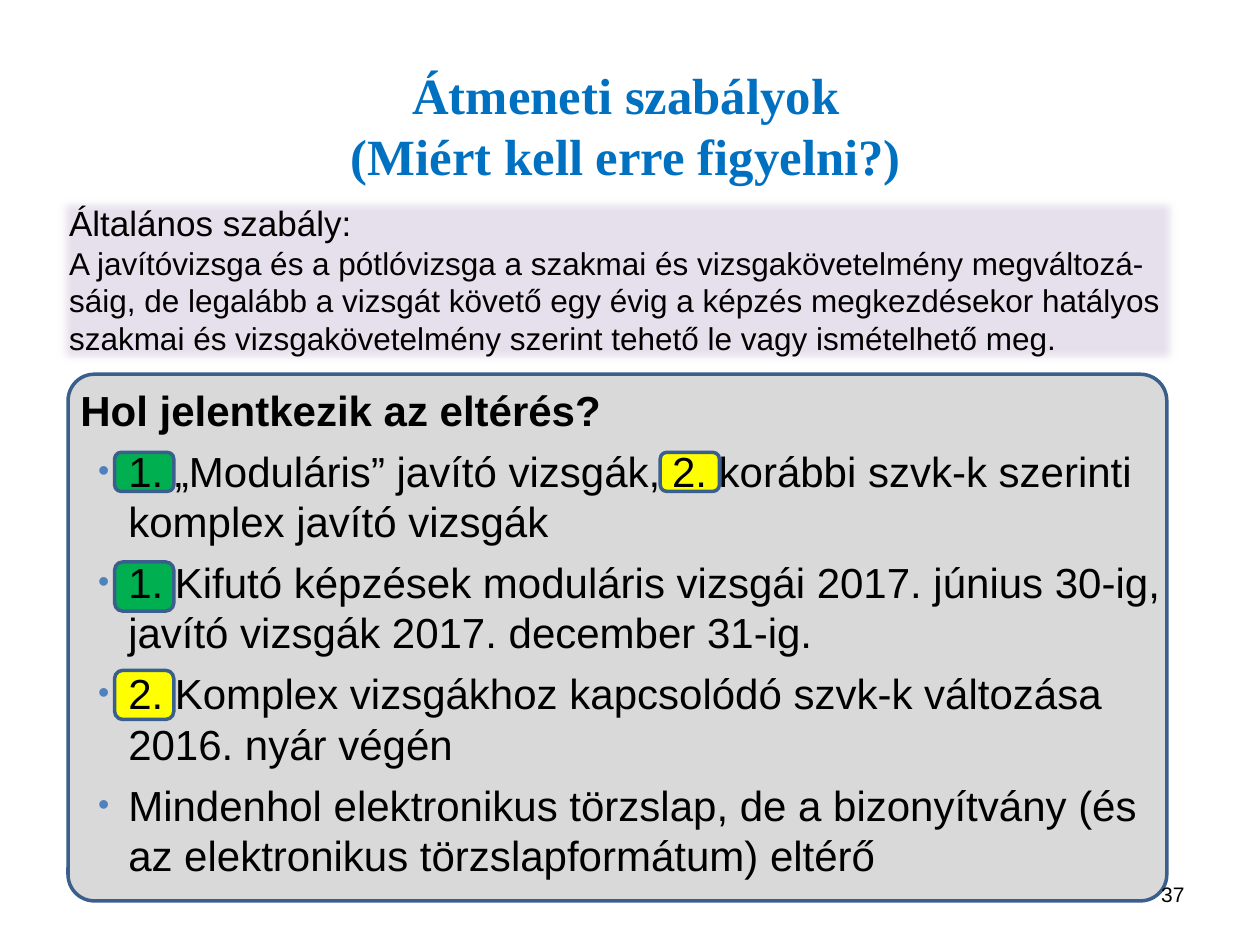
import pptx
import pptx.dml.color
import pptx.enum.shapes
import pptx.enum.text
import pptx.oxml
import pptx.oxml.ns
import pptx.util
from pptx.util import Inches

COLORS = {
    "title": "0070C0", "text": "000000", "rule": "E6E0EC", "panel": "D9D9D9",
    "border": "3A5F8C", "green": "00B050", "yellow": "FFFF00", "bullet": "4F81BD",
}
RGB = {name: pptx.dml.color.RGBColor.from_string(value) for name, value in COLORS.items()}
ALIGN = pptx.enum.text.PP_ALIGN
ANCHOR = pptx.enum.text.MSO_ANCHOR
SHAPE = pptx.enum.shapes.MSO_SHAPE
NS = pptx.oxml.ns.nsdecls("a")

prs = pptx.Presentation()
prs.slide_width, prs.slide_height = Inches(10), Inches(7.5)
slide = prs.slides.add_slide(prs.slide_layouts[6])


def add_box(kind, left, top, width, height, fill, bordered=True):
    box = slide.shapes.add_shape(kind, Inches(left), Inches(top), Inches(width), Inches(height))
    box.shadow.inherit = False
    box.fill.solid()
    box.fill.fore_color.rgb = RGB[fill]
    if bordered:
        box.line.color.rgb = RGB["border"]
        box.line.width = pptx.util.Pt(2)
    else:
        box.line.fill.background()
    return box


def write(frame, lines, align=ALIGN.LEFT, anchor=ANCHOR.TOP, face="Arial", color="text"):
    """Fill a frame with (text, size, bold, space before) lines."""
    frame.word_wrap = True
    frame.vertical_anchor = anchor
    for i, (text, size, bold, before) in enumerate(lines):
        par = frame.add_paragraph() if i else frame.paragraphs[0]
        par.text = text
        par.alignment = align
        par.space_before = pptx.util.Pt(before)
        par.font.name = face
        par.font.size = pptx.util.Pt(size)
        par.font.bold = bold
        par.font.color.rgb = RGB[color]


# Grey panel and number markers
panel = add_box(SHAPE.ROUNDED_RECTANGLE, 0.54, 2.97, 8.72, 4.18, "panel")
panel.adjustments[0] = 0.05
for left, top, height, fill in [
    (5.24, 3.59, 0.31, "yellow"), (0.91, 5.32, 0.39, "yellow"),
    (0.91, 4.46, 0.39, "green"), (0.91, 3.59, 0.31, "green"),
]:
    add_box(SHAPE.ROUNDED_RECTANGLE, left, top, 0.47, height, fill)

# Title
title = slide.shapes.add_textbox(Inches(0.44), Inches(0.44), Inches(9.06), Inches(1.1))
write(title.text_frame, [("Átmeneti szabályok\v(Miért kell erre figyelni?)", 29, True, 0)],
      ALIGN.CENTER, ANCHOR.MIDDLE, "Times New Roman", "title")

# General rule on a soft-edged band
rule = add_box(SHAPE.RECTANGLE, 0.45, 1.55, 8.9, 1.35, "rule", bordered=False)
effects = rule._element.spPr.find(pptx.oxml.ns.qn("a:effectLst"))
effects.append(pptx.oxml.parse_xml(f'<a:softEdge {NS} rad="63500"/>'))
write(rule.text_frame, [
    ("Általános szabály:", 20, False, 6),
    ("A javítóvizsga és a pótlóvizsga a szakmai és vizsgakövetelmény megváltozá-sáig, "
     "de legalább a vizsgát követő egy évig a képzés megkezdésekor hatályos szakmai és "
     "vizsgakövetelmény szerint tehető le vagy ismételhető meg.", 18, False, 0),
])

# Page number
page = slide.shapes.add_textbox(Inches(7.17), Inches(6.95), Inches(2.33), Inches(0.4))
write(page.text_frame, [("37", 12, False, 0)], ALIGN.RIGHT)

# Differences: heading and bullets
differences = slide.shapes.add_textbox(Inches(0.54), Inches(3), Inches(8.9), Inches(4.07))
points = [
    "1. „Moduláris” javító vizsgák, 2. korábbi szvk-k szerinti komplex javító vizsgák",
    "1. Kifutó képzések moduláris vizsgái 2017. június 30-ig, javító vizsgák 2017. december 31-ig.",
    "2. Komplex vizsgákhoz kapcsolódó szvk-k változása 2016. nyár végén",
    "Mindenhol elektronikus törzslap, de a bizonyítvány (és az elektronikus törzslapformátum) eltérő",
]
write(differences.text_frame, [("Hol jelentkezik az eltérés?", 24, True, 6)]
      + [(point, 24, False, 6) for point in points])
for par in differences.text_frame.paragraphs[1:]:
    props = par._p.get_or_add_pPr()
    props.set("marL", str(Inches(0.38)))
    props.set("indent", str(Inches(-0.24)))
    # Bullet elements stand before the default run properties
    run_props = props.find(pptx.oxml.ns.qn("a:defRPr"))
    for bullet in (
        f'<a:buClr {NS}><a:srgbClr val="{COLORS["bullet"]}"/></a:buClr>',
        f'<a:buSzPct {NS} val="76000"/>',
        f'<a:buFont {NS} typeface="Arial"/>',
        f'<a:buChar {NS} char="•"/>',
    ):
        run_props.addprevious(pptx.oxml.parse_xml(bullet))

prs.save("out.pptx")
